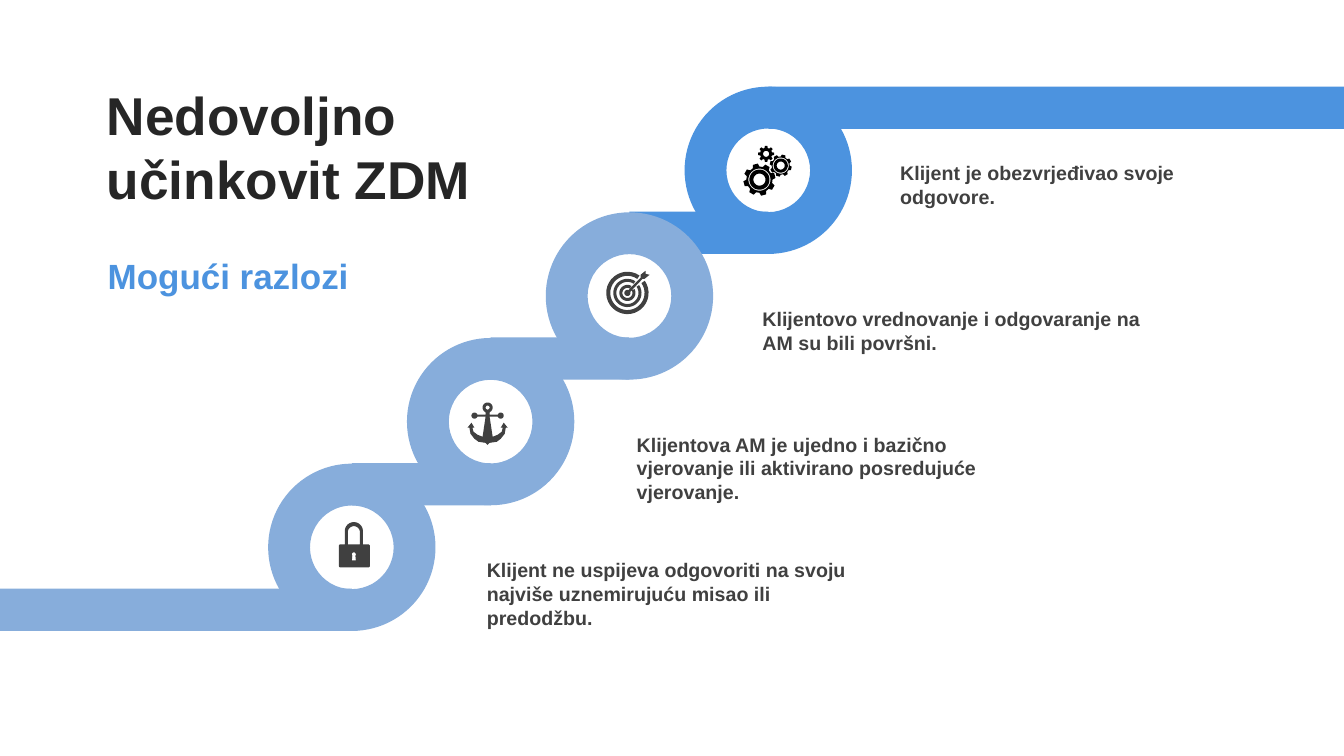
from dataclasses import dataclass
from math import cos, radians, sin

from pptx import Presentation
from pptx import util as u
from pptx.dml import color
from pptx.enum import shapes, text


@dataclass(frozen=True)
class Theme:
    font: str = "Arial"
    accent: str = "4C93DF"
    soft: str = "87ADDB"
    title: str = "262626"
    body: str = "404040"
    gears: str = "000000"
    title_size: int = 38
    subtitle_size: int = 25
    body_size: int = 14


T = Theme()
WIDTH, HEIGHT = 13.33, 7.5
RING, BAND = 1.66, 0.42
FIRST, LAST = (2.66, 4.6), (6.79, 0.86)


# Shared drawing helpers
def paint(sp, rgb):
    sp.shadow.inherit = False
    sp.fill.solid()
    sp.fill.fore_color.rgb = color.RGBColor.from_string(rgb)
    sp.line.fill.background()


def add_preset(s, kind, box, rgb):
    sp = s.shapes.add_shape(kind, *map(u.Inches, box))
    paint(sp, rgb)


def add_text(s, box, words, size, rgb, anchor=text.MSO_ANCHOR.TOP):
    tf = s.shapes.add_textbox(*map(u.Inches, box)).text_frame
    frame = {"word_wrap": True, "vertical_anchor": anchor,
             "auto_size": text.MSO_AUTO_SIZE.SHAPE_TO_FIT_TEXT}
    for key, value in frame.items():
        setattr(tf, key, value)
    r = tf.paragraphs[0].add_run()
    r.text = words
    for key, value in {"name": T.font, "size": u.Pt(size), "bold": True}.items():
        setattr(r.font, key, value)
    r.font.color.rgb = color.RGBColor.from_string(rgb)


def add_outline(s, x, y, contours, rgb, rotation=0):
    emu = [[(u.Inches(px), u.Inches(py)) for px, py in c] for c in contours]
    builder = s.shapes.build_freeform(*emu[0][0], scale=1.0)
    for i, points in enumerate(emu):
        if i:
            builder.move_to(*points[0])
        builder.add_line_segments(points[1:], close=True)
    sp = builder.convert_to_shape(u.Inches(x), u.Inches(y))
    sp.rotation = rotation
    paint(sp, rgb)


def arc(cx, cy, radius, start=0, end=360, steps=32):
    angles = [radians(start + (end - start) * i / steps) for i in range(steps + 1)]
    return [(cx + radius * cos(a), cy + radius * sin(a)) for a in angles]


# Icons, as contours measured from the icon's top left corner
def lock_icon():
    body = [(0.06, 0.22), *arc(0.15, 0.09, 0.09, 180, 360), (0.24, 0.22),
            *arc(0.29, 0.24, 0.02, -90, 0, 6), *arc(0.29, 0.43, 0.02, 0, 90, 6),
            *arc(0.02, 0.43, 0.02, 90, 180, 6), *arc(0.02, 0.24, 0.02, 180, 270, 6)]
    shackle = [(0.09, 0.22), *arc(0.15, 0.1, 0.06, 180, 360), (0.21, 0.22)]
    keyhole = [*arc(0.15, 0.32, 0.02, 140, 400, 16), (0.17, 0.38), (0.13, 0.38)]
    return [body, shackle, keyhole]


def anchor_icon():
    half = [*arc(0, 0.05, 0.05, -90, 60), (0.02, 0.1), (0.02, 0.12), (0.1, 0.12),
            *arc(0.13, 0.13, 0.03, -160, 160), (0.1, 0.14), (0.02, 0.14),
            (0.05, 0.34), (0.1, 0.32), (0.14, 0.29), (0.15, 0.25), (0.13, 0.25),
            (0.16, 0.2), (0.2, 0.25), (0.18, 0.25), (0.17, 0.31), (0.13, 0.36),
            (0.09, 0.39), (0.02, 0.4), (0, 0.42)]
    middle = 0.2
    right = [(middle + x, y) for x, y in half]
    left = [(middle - x, y) for x, y in reversed(half)]
    return [right + left, arc(middle, 0.05, 0.02)]


def target_icon():
    c = 0.21, 0.22
    rings = [arc(*c, outer, gap - 45, 315 - gap) + arc(*c, inner, 315 - gap, gap - 45)
             for outer, inner, gap in [(0.21, 0.17, 10), (0.14, 0.11, 11), (0.08, 0.05, 16)]]
    arrow = [(0.39, 0), (0.39, 0.03), (0.43, 0.04), (0.38, 0.08), (0.36, 0.08),
             *arc(*c, 0.03, -20, 290), (0.34, 0.07), (0.34, 0.04)]
    return rings + [arrow]


def gear(cx, cy, tip, root, turn, circles):
    rim = []
    for tooth in range(8):
        middle = turn + 45 * tooth
        for radius, shift in [(root, -15), (tip, -9), (tip, 9), (root, 15)]:
            a = radians(middle + shift)
            rim.append((cx + radius * cos(a), cy + radius * sin(a)))
    return [rim] + [arc(cx, cy, r) for r in circles]


def gears_icon():
    return (gear(0.16, 0.3, 0.16, 0.13, 0, [0.11, 0.1, 0.06])
            + gear(0.4, 0.22, 0.11, 0.09, -15, [0.08, 0.07, 0.04])
            + gear(0.29, 0.07, 0.08, 0.06, 15, [0.03]))


# Heading
def heading(s, x, y):
    middle = text.MSO_ANCHOR.MIDDLE
    add_text(s, (x, y, 4.45, 1.38), "Nedovoljno učinkovit ZDM",
             T.title_size, T.title, middle)
    add_text(s, (x + 0.01, y + 1.73, 3.19, 0.48), "Mogući razlozi",
             T.subtitle_size, T.accent, middle)


# One step: band from the step below, ring, icon and label
def step(s, x, y, band_left, rgb, icon, icon_at, icon_rgb, turn, label_box, label):
    band = (band_left, y + RING - BAND, x + RING / 2 - band_left, BAND)
    add_preset(s, shapes.MSO_SHAPE.RECTANGLE, band, rgb)
    add_preset(s, shapes.MSO_SHAPE.DONUT, (x, y, RING, RING), rgb)
    add_outline(s, x + icon_at[0], y + icon_at[1], icon, icon_rgb, turn)
    dx, dy, w, h = label_box
    add_text(s, (x + dx, y + dy, w, h), label, T.body_size, T.body)


# Staircase, drawn from the top down so each ring covers the band above it
def staircase(s, first, last):
    steps = [
        (T.soft, lock_icon(), (0.7, 0.58), T.body, 0, (2.07, 0.89, 4.02, 0.81),
         "Klijent ne uspijeva odgovoriti na svoju najviše uznemirujuću misao ili predodžbu."),
        (T.soft, anchor_icon(), (0.6, 0.64), T.body, 0, (2.18, 0.89, 4.02, 0.81),
         "Klijentova AM je ujedno i bazično vjerovanje ili aktivirano posredujuće vjerovanje."),
        (T.soft, target_icon(), (0.6, 0.58), T.body, 0, (2.05, 0.89, 4.02, 0.57),
         "Klijentovo vrednovanje i odgovaranje na AM su bili površni."),
        (T.accent, gears_icon(), (0.56, 0.6), T.gears, 345, (2.04, 0.69, 3.16, 0.57),
         "Klijent je obezvrjeđivao svoje odgovore."),
    ]
    top = len(steps) - 1
    dx, dy = [(b - a) / top for a, b in zip(first, last)]
    exit_left = last[0] + RING / 2
    add_preset(s, shapes.MSO_SHAPE.RECTANGLE,
               (exit_left, last[1], WIDTH - exit_left, BAND), T.accent)
    for i in reversed(range(len(steps))):
        x, y = first[0] + i * dx, first[1] + i * dy
        band_left = x - dx + RING / 2 if i else 0
        step(s, x, y, band_left, *steps[i])


def main():
    prs = Presentation()
    prs.slide_width, prs.slide_height = u.Inches(WIDTH), u.Inches(HEIGHT)
    s = prs.slides.add_slide(prs.slide_layouts[6])
    staircase(s, FIRST, LAST)
    heading(s, 0.96, 0.76)
    prs.save("out.pptx")


if __name__ == "__main__":
    main()
